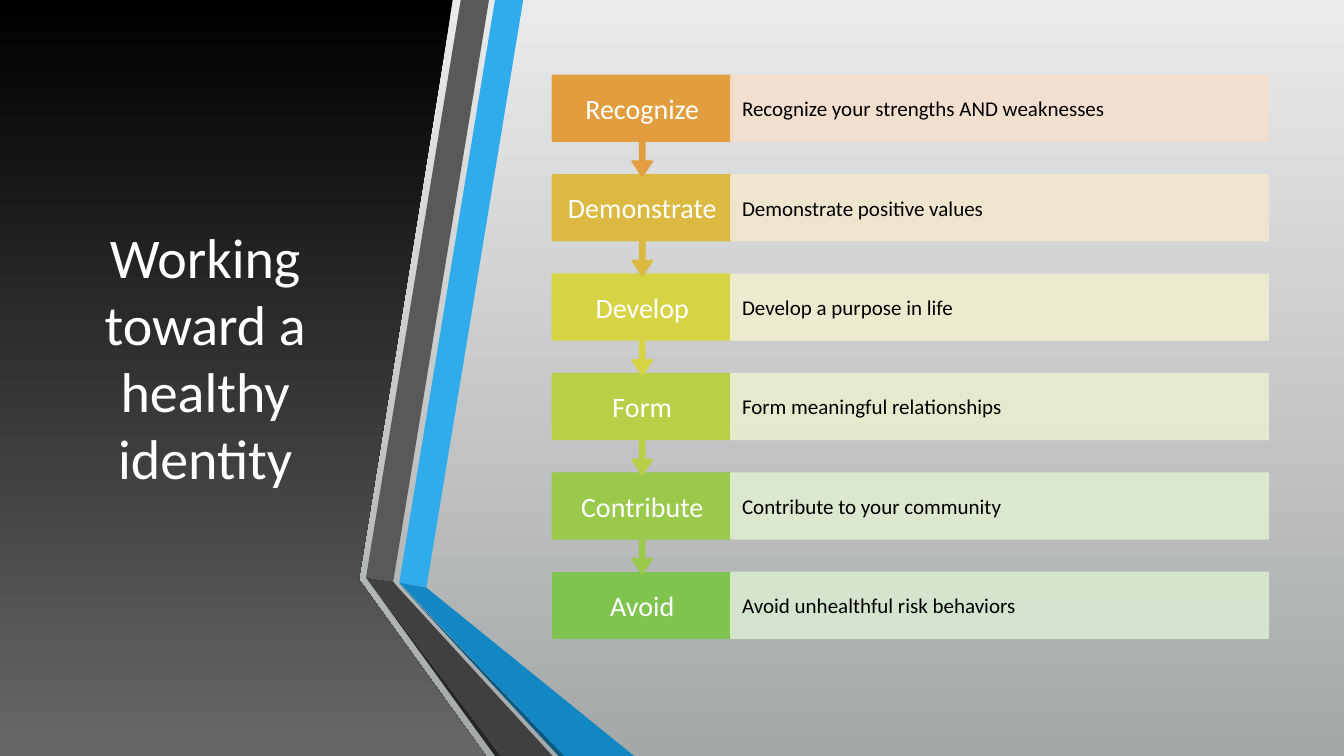
from dataclasses import dataclass

from lxml.etree import SubElement
from pptx import Presentation
from pptx.dml.color import RGBColor
from pptx.dml.fill import FillFormat
from pptx.enum.shapes import MSO_SHAPE as Preset
from pptx.enum.text import MSO_ANCHOR as Anchor, PP_ALIGN as Align
from pptx.oxml.ns import qn
from pptx.shapes.autoshape import Shape
from pptx.slide import Slide
from pptx.text.text import TextFrame
from pptx.util import Inches, Pt


@dataclass(frozen=True)
class Theme:
    font: str = "Calibri"
    title_size: int = 40
    step_size: int = 20
    detail_size: int = 15
    light_text: str = "FFFFFF"
    dark_text: str = "000000"
    background: tuple[str, str] = ("E9EAEB", "A5A8A9")
    panel: tuple[str, str] = ("000000", "676767")
    blue: str = "30ACEC"
    blue_fold: str = "1287C3"
    blue_edge: str = "0C5A82"
    gray: str = "595959"
    gray_fold: str = "404040"
    gray_edge: str = "262626"
    outline: float = 1.25
    detail_opacity: int = 90


@dataclass(frozen=True)
class Ribbon:
    color: str
    points: tuple[tuple[float, float], ...]


@dataclass(frozen=True)
class Step:
    name: str
    detail: str
    color: str
    tint: str


THEME = Theme()
SLIDE_WIDTH, SLIDE_HEIGHT = 13.33, 7.5

PANEL = ((3.53, 0), (4.49, 0), (3.56, 5.75), (4.82, 7.5), (0, 7.5), (0, 0))
RIBBONS = (
    Ribbon(THEME.blue, ((3.96, 5.78), (4.23, 5.83), (5.19, 0), (4.91, 0))),
    Ribbon(THEME.gray, ((4.85, 0), (4.57, 0), (3.63, 5.73), (3.9, 5.77))),
    Ribbon(THEME.gray_edge, ((3.63, 5.73), (4.91, 7.5), (4.97, 7.5))),
    Ribbon(THEME.blue_edge, ((3.96, 5.79), (5.54, 7.5), (5.6, 7.5))),
    Ribbon(THEME.blue_fold, ((3.96, 5.78), (5.6, 7.5), (6.29, 7.5), (4.23, 5.83))),
    Ribbon(THEME.gray_fold, ((5.48, 7.5), (3.95, 5.83), (3.9, 5.77), (3.63, 5.73), (4.97, 7.5))),
)

STEPS = (
    Step("Recognize", "Recognize your strengths AND weaknesses", "E29D3E", "F4DFCE"),
    Step("Demonstrate", "Demonstrate positive values", "DCBA41", "F2E7CF"),
    Step("Develop", "Develop a purpose in life", "D6D344", "F0EECF"),
    Step("Form", "Form meaningful relationships", "B8D048", "E8EECF"),
    Step("Contribute", "Contribute to your community", "9AC94B", "DFECD0"),
    Step("Avoid", "Avoid unhealthful risk behaviors", "80C34F", "D8E9D0"),
)
STEP_LEFT, STEP_WIDTH = 5.48, 1.78
DETAIL_LEFT, DETAIL_WIDTH = 7.25, 5.33
FIRST_TOP, LAST_TOP = 0.75, 5.68
BOX_HEIGHT, CALLOUT_HEIGHT = 0.65, 1.0
STEP_PITCH = (LAST_TOP - FIRST_TOP) / (len(STEPS) - 1)
CALLOUT_ADJUSTMENTS = (0.05, 0.1, 0.15, BOX_HEIGHT / CALLOUT_HEIGHT)


def fill_downward(fill: FillFormat, colors: tuple[str, str]) -> None:
    """Apply a gradient that runs from top to bottom."""
    fill.gradient()
    fill.gradient_angle = 270
    for stop, color in zip(fill.gradient_stops, colors):
        stop.color.rgb = RGBColor.from_string(color)


def write_text(frame: TextFrame, text: str, size: int, color: str, align: Align) -> None:
    frame.text = text
    frame.word_wrap = True
    frame.vertical_anchor = Anchor.MIDDLE
    paragraph = frame.paragraphs[0]
    paragraph.alignment = align
    font = paragraph.runs[0].font
    font.name, font.size = THEME.font, Pt(size)
    font.color.rgb = RGBColor.from_string(color)


def set_opacity(shape: Shape, percent: int) -> None:
    """Set the opacity of both the fill and the outline."""
    for color in shape.element.spPr.iter(qn("a:srgbClr")):
        SubElement(color, qn("a:alpha")).set("val", str(percent * 1000))


def add_outline_shape(slide: Slide, points: tuple[tuple[float, float], ...]) -> Shape:
    # The builder rounds its coordinates to whole units, so it is given EMU.
    corners = [(Inches(x), Inches(y)) for x, y in points]
    builder = slide.shapes.build_freeform(*corners[0])
    builder.add_line_segments(corners[1:], close=True)
    shape = builder.convert_to_shape()
    shape.shadow.inherit = False
    shape.line.fill.background()
    return shape


def add_ribbon(slide: Slide, ribbon: Ribbon) -> None:
    shape = add_outline_shape(slide, ribbon.points)
    shape.fill.solid()
    shape.fill.fore_color.rgb = RGBColor.from_string(ribbon.color)


def add_box(slide: Slide, preset: Preset, left: float, top: float, width: float,
            height: float, color: str, inset_x: float, inset_y: float) -> Shape:
    shape = slide.shapes.add_shape(preset, Inches(left), Inches(top), Inches(width), Inches(height))
    shape.shadow.inherit = False
    shape.fill.solid()
    shape.fill.fore_color.rgb = RGBColor.from_string(color)
    shape.line.color.rgb = RGBColor.from_string(color)
    shape.line.width = Pt(THEME.outline)
    frame = shape.text_frame
    frame.margin_left = frame.margin_right = Inches(inset_x)
    frame.margin_top = frame.margin_bottom = Inches(inset_y)
    frame.paragraphs[0].line_spacing = 0.9
    return shape


def add_step(slide: Slide, step: Step, top: float, is_last: bool) -> None:
    preset = Preset.RECTANGLE if is_last else Preset.DOWN_ARROW_CALLOUT
    height = BOX_HEIGHT if is_last else CALLOUT_HEIGHT
    box = add_box(slide, preset, STEP_LEFT, top, STEP_WIDTH, height, step.color, 0.13, 0.16)
    if not is_last:
        for index, value in enumerate(CALLOUT_ADJUSTMENTS):
            box.adjustments[index] = value
    write_text(box.text_frame, step.name, THEME.step_size, THEME.light_text, Align.CENTER)

    detail = add_box(slide, Preset.RECTANGLE, DETAIL_LEFT, top, DETAIL_WIDTH, BOX_HEIGHT,
                     step.tint, 0.11, 0.21)
    set_opacity(detail, THEME.detail_opacity)
    write_text(detail.text_frame, step.detail, THEME.detail_size, THEME.dark_text, Align.LEFT)


def add_title_panel(slide: Slide) -> None:
    panel = add_outline_shape(slide, PANEL)
    fill_downward(panel.fill, THEME.panel)
    title = slide.shapes.title
    title.left, title.top = Inches(0.59), Inches(0.75)
    title.width, title.height = Inches(2.89), Inches(5.58)
    write_text(title.text_frame, "Working toward a healthy identity",
               THEME.title_size, THEME.light_text, Align.CENTER)
    panel.element.addnext(title.element)


def main() -> None:
    presentation = Presentation()
    presentation.slide_width = Inches(SLIDE_WIDTH)
    presentation.slide_height = Inches(SLIDE_HEIGHT)
    slide = presentation.slides.add_slide(presentation.slide_layouts.get_by_name("Title Only"))
    fill_downward(slide.background.fill, THEME.background)
    add_title_panel(slide)
    for ribbon in RIBBONS:
        add_ribbon(slide, ribbon)
    # Drawn from the bottom up, so each arrow tip lies over the box below it.
    for index, step in reversed(list(enumerate(STEPS))):
        add_step(slide, step, FIRST_TOP + index * STEP_PITCH, index == len(STEPS) - 1)
    presentation.save("out.pptx")


if __name__ == "__main__":
    main()
